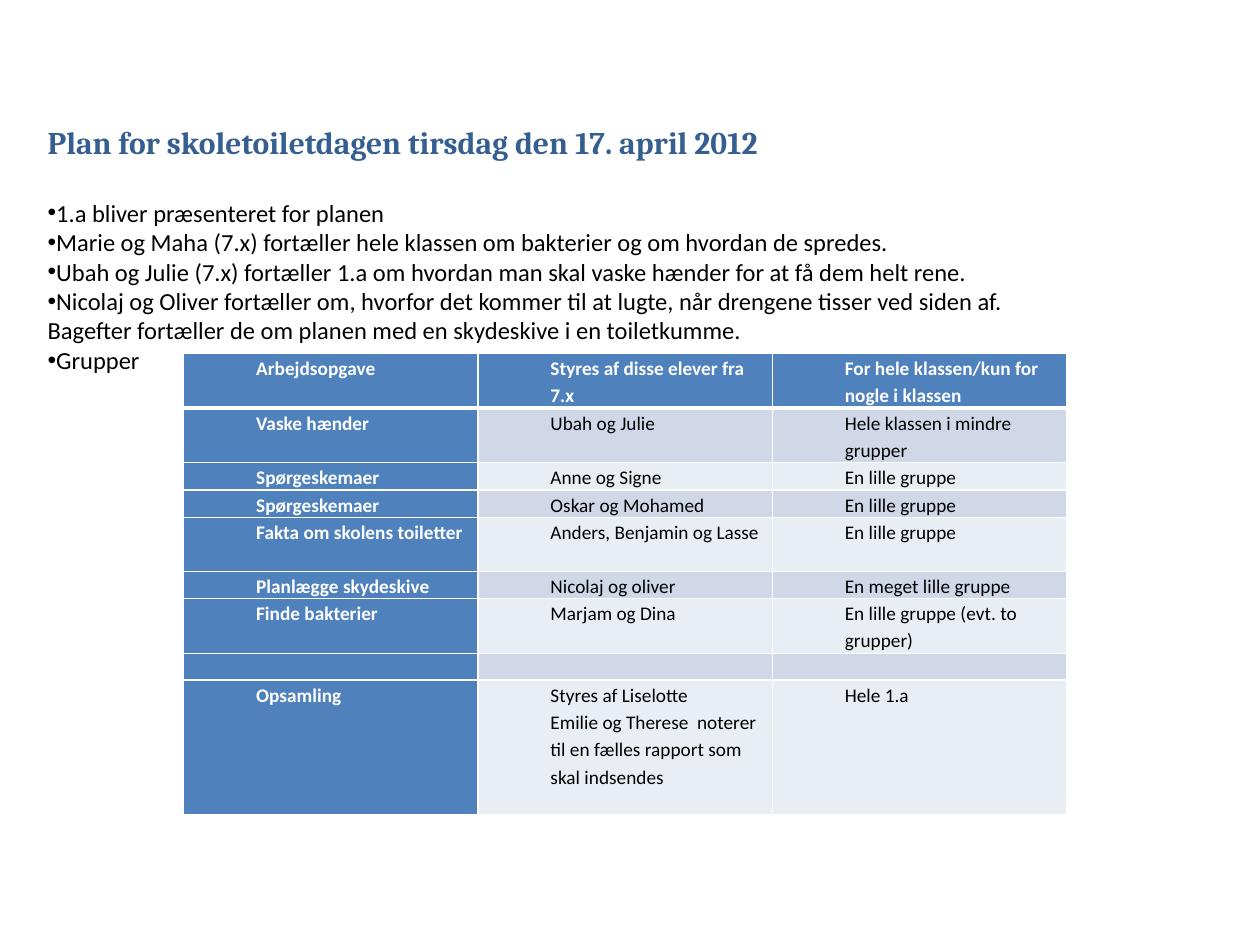
import lxml.etree
import pptx
import pptx.dml.color
import pptx.enum.text
import pptx.oxml.ns
import pptx.util

COLORS = {
    "heading": "365F91",
    "accent": "4F81BD",
    "band_dark": "D0D8E8",
    "band_light": "E9EDF4",
    "white": "FFFFFF",
    "black": "000000",
}

TITLE = "Plan for skoletoiletdagen tirsdag den 17. april 2012"
PLAN = [
    "1.a bliver præsenteret for planen",
    "Marie og Maha (7.x) fortæller hele klassen om bakterier og om hvordan de spredes.",
    "Ubah og Julie (7.x) fortæller 1.a om hvordan man skal vaske hænder for at få dem helt rene.",
    "Nicolaj og Oliver fortæller om, hvorfor det kommer til at lugte, når drengene tisser ved siden af. "
    "Bagefter fortæller de om planen med en skydeskive i en toiletkumme.",
    "Grupper",
]
TASKS = [
    ("Arbejdsopgave", "Styres af disse elever fra 7.x", "For hele klassen/kun for nogle i klassen"),
    ("Vaske hænder", "Ubah og Julie", "Hele klassen i mindre grupper"),
    ("Spørgeskemaer", "Anne og Signe", "En lille gruppe"),
    ("Spørgeskemaer", "Oskar og Mohamed", "En lille gruppe"),
    ("Fakta om skolens toiletter", "Anders, Benjamin og Lasse", "En lille gruppe"),
    ("Planlægge skydeskive", "Nicolaj og oliver", "En meget lille gruppe"),
    ("Finde bakterier", "Marjam og Dina", "En lille gruppe (evt. to grupper)"),
    ("", "", ""),
    (
        "Opsamling",
        "Styres af Liselotte\nEmilie og Therese  noterer til en fælles rapport som skal indsendes",
        "Hele 1.a",
    ),
]
ROW_LINES = [2, 2, 1, 1, 2, 1, 2, 1, 5]
LINE_HEIGHT = 15.42


def points(value):
    return pptx.util.Pt(value)


def rgb(name):
    return pptx.dml.color.RGBColor.from_string(COLORS[name])


def write_text(frame, text, size, font="Calibri", color="black", bold=False, line_spacing=1.0, indent=0):
    frame.word_wrap = True
    frame.text = text
    for paragraph in frame.paragraphs:
        paragraph.alignment = pptx.enum.text.PP_ALIGN.LEFT
        paragraph.line_spacing = line_spacing
        paragraph.space_before = points(0)
        properties = paragraph._p.get_or_add_pPr()
        properties.set("marL", str(points(indent)))
        properties.set("indent", "0")
        for run in paragraph.runs:
            run.font.size = points(size)
            run.font.name = font
            run.font.bold = bold
            run.font.color.rgb = rgb(color)
        if not paragraph.runs:
            end = lxml.etree.SubElement(paragraph._p, pptx.oxml.ns.qn("a:endParaRPr"))
            end.set("sz", str(size * 100))


class SlideBuilder:
    def __init__(self, presentation):
        self.slide = presentation.slides.add_slide(presentation.slide_layouts[1])

    def placeholder(self, shape, text, box, anchor, **style):
        shape.left, shape.top, shape.width, shape.height = map(points, box)
        frame = shape.text_frame
        frame.auto_size = pptx.enum.text.MSO_AUTO_SIZE.NONE
        frame.vertical_anchor = anchor
        frame.margin_left = frame.margin_right = points(7.2)
        frame.margin_top = frame.margin_bottom = points(0)
        write_text(frame, text, **style)

    def title(self, text, box):
        self.placeholder(self.slide.shapes.title, text, box, pptx.enum.text.MSO_ANCHOR.MIDDLE,
                         size=18, font="Cambria", color="heading", bold=True)

    def bullets(self, items, box):
        self.placeholder(self.slide.placeholders[1], "\n".join(items), box,
                         pptx.enum.text.MSO_ANCHOR.TOP, size=14)

    def borders(self, cell, **widths):
        properties = cell._tc.get_or_add_tcPr()
        for side in "LRTB":
            line = lxml.etree.SubElement(properties, pptx.oxml.ns.qn(f"a:ln{side}"))
            line.set("w", str(points(widths.get(side, 1))))
            fill = lxml.etree.SubElement(line, pptx.oxml.ns.qn("a:solidFill"))
            lxml.etree.SubElement(fill, pptx.oxml.ns.qn("a:srgbClr")).set("val", COLORS["white"])

    def cell(self, cell, text, row, column):
        heading = row == 0 or column == 0
        band = "band_dark" if row % 2 else "band_light"
        self.borders(cell, B=3 if row == 0 else 1, T=3 if row == 1 else 1)
        cell.fill.solid()
        cell.fill.fore_color.rgb = rgb("accent" if heading else band)
        cell.margin_left = cell.margin_right = points(5.4)
        cell.margin_top = cell.margin_bottom = points(0)
        write_text(cell.text_frame, text, size=11, color="white" if heading else "black",
                   bold=heading, line_spacing=1.15, indent=36)

    def table(self, rows, row_lines, left, top, width):
        height = sum(row_lines) * LINE_HEIGHT
        table = self.slide.shapes.add_table(
            len(rows), len(rows[0]), points(left), points(top), points(width), points(height)
        ).table
        table.first_col = True
        for row, texts in enumerate(rows):
            table.rows[row].height = points(row_lines[row] * LINE_HEIGHT)
            for column, text in enumerate(texts):
                self.cell(table.cell(row, column), text, row, column)


def main():
    presentation = pptx.Presentation()
    presentation.slide_width = points(720)
    presentation.slide_height = points(540)
    builder = SlideBuilder(presentation)
    builder.title(TITLE, (20, 68, 601, 26))
    builder.bullets(PLAN, (20, 113, 601, 104))
    builder.table(TASKS, ROW_LINES, left=105, top=202, width=504.6)
    presentation.save("out.pptx")


if __name__ == "__main__":
    main()
